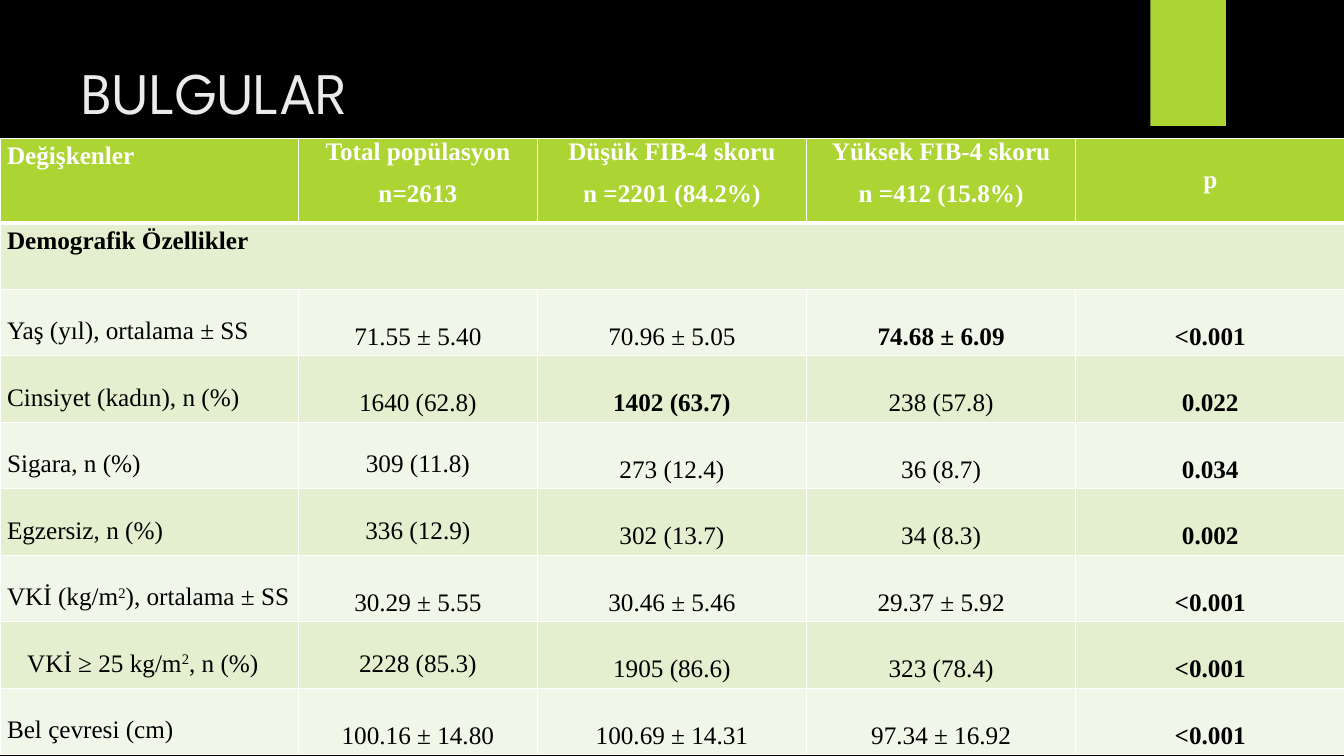
from lxml.etree import SubElement
from pptx import Presentation
from pptx.dml.color import RGBColor
from pptx.enum.shapes import MSO_SHAPE
from pptx.enum.text import MSO_ANCHOR, PP_ALIGN
from pptx.oxml.ns import qn
from pptx.util import Inches, Pt

BLACK = RGBColor(0x00, 0x00, 0x00)
WHITE = RGBColor(0xFF, 0xFF, 0xFF)
TITLE_GREY = RGBColor(0xEB, 0xEB, 0xEB)
LIME = RGBColor(0xAC, 0xD4, 0x33)
BANDS = (RGBColor(0xE3, 0xEF, 0xCE), RGBColor(0xF1, 0xF7, 0xE8))

COL_WIDTHS = (2.96, 2.37, 2.67, 2.67, 2.67)
HEADER_HEIGHT, ROW_HEIGHT, TABLE_TOP = 0.84, 0.66, 1.37
P_COLUMN = len(COL_WIDTHS) - 1

HEADERS = ("Değişkenler", "Total popülasyon\nn=2613", "Düşük FIB-4 skoru\nn =2201 (84.2%)",
           "Yüksek FIB-4 skoru\nn =412 (15.8%)", "p")
SECTION = "Demografik Özellikler"
ROWS = (
    ("Yaş (yıl), ortalama ± SS", "71.55 ± 5.40", "70.96 ± 5.05", "74.68 ± 6.09", "<0.001"),
    ("Cinsiyet (kadın), n (%)", "1640 (62.8)", "1402 (63.7)", "238 (57.8)", "0.022"),
    ("Sigara, n (%)", "309 (11.8)", "273 (12.4)", "36 (8.7)", "0.034"),
    ("Egzersiz, n (%)", "336 (12.9)", "302 (13.7)", "34 (8.3)", "0.002"),
    ("VKİ (kg/m^2^), ortalama ± SS", "30.29 ± 5.55", "30.46 ± 5.46", "29.37 ± 5.92", "<0.001"),
    ("VKİ ≥ 25 kg/m^2^, n (%)", "2228 (85.3)", "1905 (86.6)", "323 (78.4)", "<0.001"),
    ("Bel çevresi (cm)", "100.16 ± 14.80", "100.69 ± 14.31", "97.34 ± 16.92", "<0.001"),
)
HIGHLIGHTS = {"74.68 ± 6.09", "1402 (63.7)"}
TOP_ANCHORED = {"309 (11.8)", "336 (12.9)", "2228 (85.3)"}
INDENTED = {"VKİ ≥ 25 kg/m^2^, n (%)"}


def add_title(s, text):
    """Place and format the title placeholder."""
    title = s.shapes.title
    title.left, title.top = Inches(0.71), Inches(0.5)
    title.width, title.height = Inches(10.29), Inches(1.53)
    tf = title.text_frame
    tf.text = text
    tf.vertical_anchor = MSO_ANCHOR.TOP
    p = tf.paragraphs[0]
    p.alignment = PP_ALIGN.LEFT
    p.font.name, p.font.size = "League Spartan", Pt(42)
    p.font.color.rgb = TITLE_GREY


def add_accent(s):
    """Draw the lime tab hanging from the top edge."""
    tab = s.shapes.add_shape(MSO_SHAPE.RECTANGLE, Inches(11.41), 0, Inches(0.75), Inches(1.25))
    tab.shadow.inherit = False
    tab.fill.solid()
    tab.fill.fore_color.rgb = LIME
    tab.line.fill.background()


def set_borders(cell, top=1, bottom=1):
    """Give a cell white borders, with top and bottom widths in points."""
    tc_pr = cell._tc.get_or_add_tcPr()
    for side, width in (("L", 1), ("R", 1), ("T", top), ("B", bottom)):
        line = SubElement(tc_pr, qn(f"a:ln{side}"), w=str(Pt(width)))
        fill = SubElement(line, qn("a:solidFill"))
        SubElement(fill, qn("a:srgbClr"), val=str(WHITE))


def add_runs(p, text):
    """Add runs to a paragraph, raising the parts between carets."""
    for i, part in enumerate(text.split("^")):
        r = p.add_run()
        r.text = part
        if i % 2:
            r._r.get_or_add_rPr().set("baseline", "30000")


def fill_cell(cell, text, fill, color=BLACK, bold=False, align=PP_ALIGN.LEFT,
              spacing=2.0, anchor=MSO_ANCHOR.TOP, top=1, bottom=1):
    """Write and format one table cell."""
    set_borders(cell, top, bottom)
    cell.fill.solid()
    cell.fill.fore_color.rgb = fill
    cell.margin_left = cell.margin_right = Inches(0.07)
    cell.margin_top = cell.margin_bottom = 0
    cell.vertical_anchor = anchor
    tf = cell.text_frame
    for i, line in enumerate(text.split("\n")):
        p = tf.add_paragraph() if i else tf.paragraphs[0]
        add_runs(p, line)
        p.alignment, p.line_spacing, p.space_after = align, spacing, Pt(10)
        if text in INDENTED:
            p._p.get_or_add_pPr().set("indent", str(Inches(0.2)))
        p.font.name, p.font.size, p.font.bold = "Times New Roman", Pt(18), bold
        p.font.color.rgb = color


def fill_header(table):
    """Fill the lime heading row."""
    for c, text in enumerate(HEADERS):
        spacing = {0: 1.15, P_COLUMN: 2.0}.get(c, 1.0)
        align = PP_ALIGN.CENTER if c else PP_ALIGN.JUSTIFY
        fill_cell(table.cell(0, c), text, LIME, WHITE, True, align, spacing, bottom=3)


def fill_body(table):
    """Fill the section row and the banded data rows."""
    section = table.cell(1, 0)
    section.merge(table.cell(1, P_COLUMN))
    fill_cell(section, SECTION, BANDS[0], bold=True, spacing=1.15, top=3)
    for r, row in enumerate(ROWS, start=2):
        for c, text in enumerate(row):
            is_top = c == 0 or text in TOP_ANCHORED
            fill_cell(table.cell(r, c), text, BANDS[(r - 1) % 2],
                      bold=c == P_COLUMN or text in HIGHLIGHTS,
                      align=PP_ALIGN.CENTER if c else PP_ALIGN.LEFT,
                      anchor=MSO_ANCHOR.TOP if is_top else MSO_ANCHOR.MIDDLE)


def add_findings_table(s):
    """Add the full-width table of findings."""
    heights = [HEADER_HEIGHT] + [ROW_HEIGHT] * (len(ROWS) + 1)
    table = s.shapes.add_table(len(heights), len(COL_WIDTHS), 0, Inches(TABLE_TOP),
                               Inches(sum(COL_WIDTHS)), Inches(sum(heights))).table
    for column, width in zip(table.columns, COL_WIDTHS):
        column.width = Inches(width)
    for row, height in zip(table.rows, heights):
        row.height = Inches(height)
    fill_header(table)
    fill_body(table)


def main():
    """Build the findings slide."""
    prs = Presentation()
    prs.slide_width, prs.slide_height = Inches(13.33), Inches(7.5)
    s = prs.slides.add_slide(prs.slide_layouts[5])
    s.background.fill.solid()
    s.background.fill.fore_color.rgb = BLACK
    add_accent(s)
    add_title(s, "BULGULAR")
    add_findings_table(s)
    prs.save("out.pptx")


if __name__ == "__main__":
    main()
